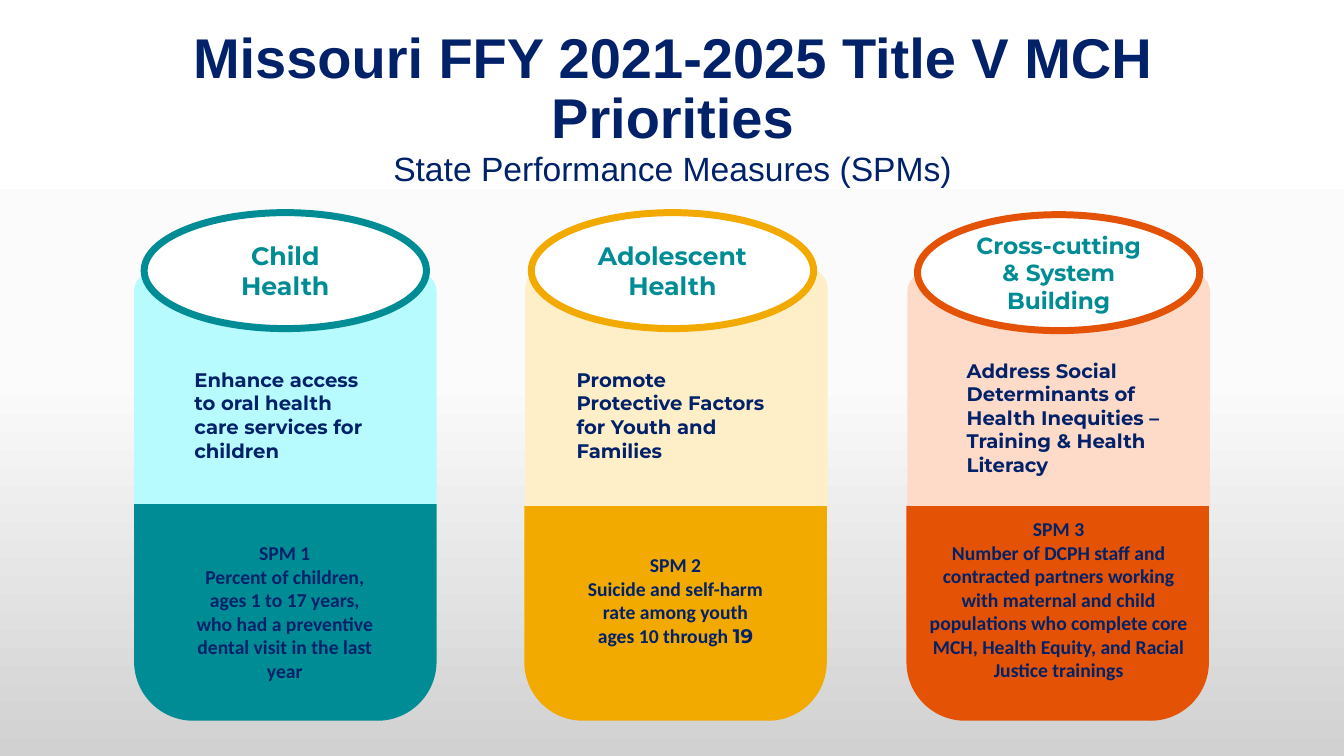
import pptx
import pptx.util
import pptx.oxml
import pptx.oxml.ns
import pptx.dml.color
import pptx.enum.shapes
import pptx.enum.text

PX = 9144  # 100 px to the inch
COLORS = {
    "navy": "012169", "teal": "008C95", "white": "FFFFFF",
    "aqua": "B7FBFF", "amber": "F2A900", "cream": "FFEFC9",
    "orange": "E35205", "peach": "FEDBC9",
}
BACKGROUND = [(0, "FFFFFF"), (50, "FBFBFB"), (100, "D1D1D1")]
SHAPE = pptx.enum.shapes.MSO_SHAPE
ALIGN = pptx.enum.text.PP_ALIGN
ANCHOR = pptx.enum.text.MSO_ANCHOR

# Offsets (dx, dy) and boxes (dx, dy, w, h) are relative to the card's corner
CARDS = [
    dict(x=133, main="teal", tint="aqua", panel=(0, 59), base=289,
         oval=(10, 0), head=["Child", "Health"], head_size=18,
         goal_box=(50, 149, 199, 104),
         goal="Enhance access to oral health care services for children",
         measure_box=(50, 321, 199, 151),
         measure=["SPM 1", "Percent of children, ages 1 to 17 years, who had a "
                  "preventive dental visit in the last year"]),
    dict(x=520, main="amber", tint="cream", panel=(1, 56), base=291,
         oval=(7, 0), head=["Adolescent", "Health"], head_size=18,
         goal_box=(42, 149, 218, 104),
         goal="Promote Protective Factors for Youth and Families",
         measure_box=(52, 333, 196, 128),
         measure=["SPM 2", [("Suicide and self-harm rate among youth ages 10 through ",
                             "Calibri"), ("19", "Montserrat")]]),
    dict(x=899, main="orange", tint="peach", panel=(1, 59), base=291,
         oval=(11, 2), head=["Cross-cutting", "& System Building"], head_size=16.6,
         goal_box=(50, 140, 233, 104),
         goal="Address Social Determinants of Health Inequities – "
              "Training & Health Literacy",
         measure_box=(11, 297, 280, 199),
         measure=["SPM 3", "Number of DCPH staff and contracted partners working "
                  "with maternal and child populations who complete core MCH, "
                  "Health Equity, and Racial", "Justice trainings"]),
]


def rgb(name):
    return pptx.dml.color.RGBColor.from_string(COLORS[name])


def emu(*lengths):
    return [pptx.util.Emu(n * PX) for n in lengths]


def write(tf, paragraphs, font, size, color, bold=True, align=ALIGN.CENTER,
          anchor=ANCHOR.TOP):
    """Fill a frame; a paragraph is a string or a list of (text, font) runs."""
    tf.word_wrap = True
    tf.auto_size = pptx.enum.text.MSO_AUTO_SIZE.NONE
    tf.vertical_anchor = anchor
    for i, runs in enumerate(paragraphs):
        p = tf.paragraphs[0] if i == 0 else tf.add_paragraph()
        p.alignment = align
        for text, face in [(runs, font)] if isinstance(runs, str) else runs:
            r = p.add_run()
            r.text = text
            r.font.name = face
            r.font.size = pptx.util.Pt(size)
            r.font.bold = bold
            r.font.color.rgb = rgb(color)


def add_block(s, kind, box, fill, adjustments=()):
    sp = s.shapes.add_shape(kind, *emu(*box))
    sp.shadow.inherit = False
    sp.fill.solid()
    sp.fill.fore_color.rgb = rgb(fill)
    sp.line.fill.background()
    for i, value in enumerate(adjustments):
        sp.adjustments[i] = value
    return sp


def paint_background(s):
    fill = s.background.fill
    fill.gradient()
    fill.gradient_angle = 270
    stops = next(s._element.iter(pptx.oxml.ns.qn("a:gsLst")))
    for stop in list(stops):
        stops.remove(stop)
    for percent, color in BACKGROUND:
        stops.append(pptx.oxml.parse_xml(
            f'<a:gs {pptx.oxml.ns.nsdecls("a")} pos="{percent * 1000}">'
            f'<a:srgbClr val="{color}"/></a:gs>'))


def add_heading(s, box):
    x, y, w, h = box
    title, subtitle = s.shapes.title, s.placeholders[1]
    title.left, title.top, title.width, title.height = emu(x, y, w, 97)
    write(title.text_frame, ["Missouri FFY 2021-2025 Title V MCH Priorities"],
          "Arial", 40, "navy", anchor=ANCHOR.MIDDLE)
    subtitle.left, subtitle.top, subtitle.width, subtitle.height = emu(
        x + 75, y + h - 48, w - 150, 48)
    write(subtitle.text_frame, ["State Performance Measures (SPMs)"],
          "Arial", 24, "navy", bold=False)
    for sp, before in ((title, 0), (subtitle, 10)):
        p = sp.text_frame.paragraphs[0]
        p.line_spacing = 0.9
        p.space_before = pptx.util.Pt(before)


def add_card(s, box, card):
    x, y, w, h = box

    # Pale panel and strong base with rounded bottom corners
    dx, dy = card["panel"]
    add_block(s, SHAPE.ROUNDED_RECTANGLE, (x + dx, y + dy, w, 250),
              card["tint"], [0.076])
    base = add_block(s, SHAPE.ROUND_2_SAME_RECTANGLE,
                     (x, y + card["base"], w, h - card["base"]),
                     card["main"], [0.273, 0])
    base.rotation = 180

    # Oval heading
    dx, dy = card["oval"]
    oval = add_block(s, SHAPE.OVAL, (x + dx, y + dy, 280, 115), "white")
    oval.line.color.rgb = rgb(card["main"])
    oval.line.width = pptx.util.Pt(5)
    write(oval.text_frame, card["head"], "Montserrat", card["head_size"],
          "teal", anchor=ANCHOR.MIDDLE)

    # Goal and measure texts
    for part, paragraphs, font, align in (
            ("goal_box", [card["goal"]], "Montserrat", ALIGN.LEFT),
            ("measure_box", card["measure"], "Calibri", ALIGN.CENTER)):
        dx, dy, tw, th = card[part]
        sp = s.shapes.add_textbox(*emu(x + dx, y + dy, tw, th))
        write(sp.text_frame, paragraphs, font, 14, "navy", align=align)


def main():
    prs = pptx.Presentation()
    prs.slide_width, prs.slide_height = emu(1333, 750)
    s = prs.slides.add_slide(prs.slide_layouts[0])
    paint_background(s)
    add_heading(s, (92, 41, 1150, 153))
    for card in CARDS:
        add_card(s, (card["x"], 211, 300, 504), card)
    prs.save("out.pptx")


if __name__ == "__main__":
    main()
